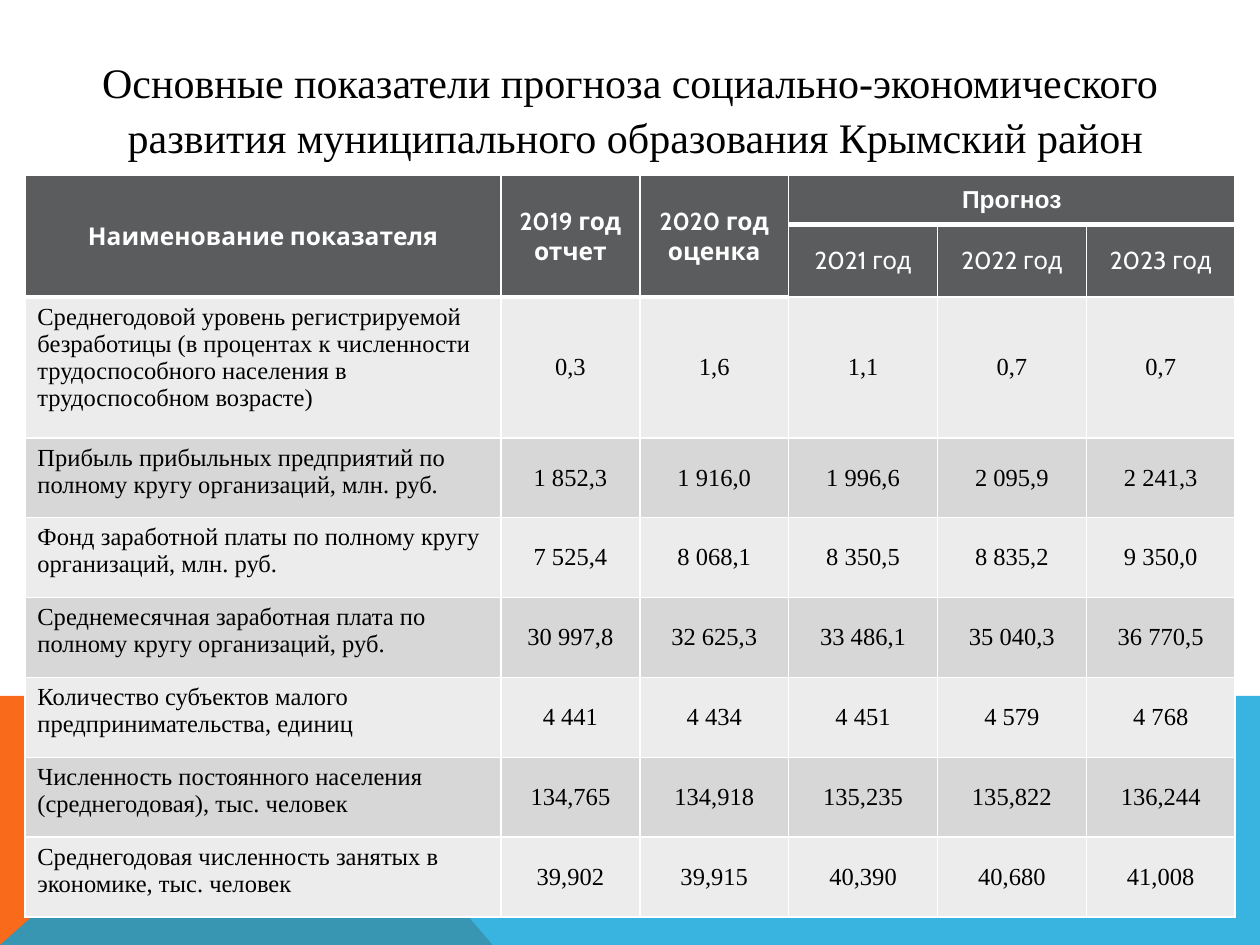
from dataclasses import dataclass

from lxml.etree import SubElement
from pptx import Presentation
from pptx.dml.color import RGBColor
from pptx.enum.text import MSO_ANCHOR, MSO_AUTO_SIZE, PP_ALIGN
from pptx.oxml.ns import qn
from pptx.util import Cm, Pt

# Content
TITLE = [
    "Основные показатели прогноза социально-экономического ",
    "развития муниципального образования Крымский район",
]
HEADINGS = ["Наименование показателя", "2019 год отчет", "2020 год оценка"]
FORECAST = "Прогноз"
FORECAST_YEARS = ["2021 год", "2022 год", "2023 год"]
INDICATORS = [
    ("Среднегодовой уровень регистрируемой безработицы (в процентах к численности "
     "трудоспособного населения в трудоспособном возрасте)",
     "0,3", "1,6", "1,1", "0,7", "0,7"),
    ("Прибыль прибыльных предприятий по полному кругу организаций, млн. руб.",
     "1 852,3", "1 916,0", "1 996,6", "2 095,9", "2 241,3"),
    ("Фонд заработной платы по полному кругу организаций, млн. руб.",
     "7 525,4", "8 068,1", "8 350,5", "8 835,2", "9 350,0"),
    ("Среднемесячная заработная плата по полному кругу организаций, руб.",
     "30 997,8", "32 625,3", "33 486,1", "35 040,3", "36 770,5"),
    ("Количество субъектов малого предпринимательства, единиц",
     "4 441", "4 434", "4 451", "4 579", "4 768"),
    ("Численность постоянного населения (среднегодовая), тыс. человек",
     "134,765", "134,918", "135,235", "135,822", "136,244"),
    ("Среднегодовая численность занятых в экономике, тыс. человек",
     "39,902", "39,915", "40,390", "40,680", "41,008"),
]

# Layout in centimetres
SLIDE_WIDTH, SLIDE_HEIGHT = 25.4, 19.05
COLUMN_WIDTHS = [9.6, 2.8] + [3.0] * 4
ROW_HEIGHTS = [0.99, 1.42, 2.84] + [1.61] * 6
BAND_TOP, BAND_CORNER, BAND_FOOT = 14.03, 5.66, 9.93


@dataclass(frozen=True)
class Theme:
    text: str = "000000"
    header: str = "5B5C5E"
    header_text: str = "FFFFFF"
    border: str = "FFFFFF"
    stripes: tuple = ("ECECEC", "D7D7D8")
    orange: str = "F96A1B"
    blue: str = "08A1D9"
    blue_opacity: int = 80
    serif: str = "Times New Roman"
    header_font: str = "Cabin"
    forecast_font: str = "Arial"
    title_size: int = 24
    table_size: int = 14


THEME = Theme()


def style_font(font, name, size, color, bold=False):
    font.name, font.size, font.bold = name, Pt(size), bold
    font.color.rgb = RGBColor.from_string(color)


def add_band(slide, points, color, opacity=100):
    corners = [(Cm(x), Cm(y)) for x, y in points]
    builder = slide.shapes.build_freeform(*corners[0])
    builder.add_line_segments(corners[1:], close=True)
    shape = builder.convert_to_shape()
    shape.shadow.inherit = False
    shape.fill.solid()
    shape.fill.fore_color.rgb = RGBColor.from_string(color)
    shape.line.fill.background()
    if opacity < 100:
        rgb = shape._element.spPr.find(qn("a:solidFill")).find(qn("a:srgbClr"))
        SubElement(rgb, qn("a:alpha"), val=str(opacity * 1000))


def set_borders(cell, bottom=1):
    properties = cell._tc.get_or_add_tcPr()
    for side, width in (("L", 1), ("R", 1), ("T", 1), ("B", bottom)):
        line = SubElement(properties, qn(f"a:ln{side}"), w=str(Pt(width)))
        fill = SubElement(line, qn("a:solidFill"))
        SubElement(fill, qn("a:srgbClr"), val=THEME.border)


def fill_cell(cell, text, fill, font_name, color, bold=False, centred=True):
    cell.fill.solid()
    cell.fill.fore_color.rgb = RGBColor.from_string(fill)
    cell.vertical_anchor = MSO_ANCHOR.MIDDLE if centred else MSO_ANCHOR.TOP
    cell.text = text
    paragraph = cell.text_frame.paragraphs[0]
    paragraph.alignment = PP_ALIGN.CENTER if centred else PP_ALIGN.LEFT
    style_font(paragraph.font, font_name, THEME.table_size, color, bold)


def fill_header(cell, text, font_name=THEME.header_font, bold=True):
    fill_cell(cell, text, THEME.header, font_name, THEME.header_text, bold)


def add_title(slide):
    title = slide.shapes.title
    title.left, title.top, title.width, title.height = Cm(0.3), Cm(0.91), Cm(25.02), Cm(2.31)
    frame = title.text_frame
    frame.word_wrap = True
    frame.auto_size = MSO_AUTO_SIZE.NONE
    frame.vertical_anchor = MSO_ANCHOR.TOP
    frame.text = "\n".join(TITLE)
    for paragraph in frame.paragraphs:
        paragraph.alignment = PP_ALIGN.CENTER
        paragraph.line_spacing = 1.1
        paragraph.space_before = Pt(0)
        style_font(paragraph.font, THEME.serif, THEME.title_size, THEME.text)


def add_indicator_table(slide):
    table = slide.shapes.add_table(
        len(ROW_HEIGHTS), len(COLUMN_WIDTHS), Cm(0.5), Cm(3.54),
        Cm(sum(COLUMN_WIDTHS)), Cm(sum(ROW_HEIGHTS))).table
    table.first_row = table.horz_banding = False
    for column, width in zip(table.columns, COLUMN_WIDTHS):
        column.width = Cm(width)
    for row, height in zip(table.rows, ROW_HEIGHTS):
        row.height = Cm(height)

    # Borders: a heavier rule below the bold headings
    first_year = len(HEADINGS)
    for r in range(len(ROW_HEIGHTS)):
        for c in range(len(COLUMN_WIDTHS)):
            heavy = r == 0 or (r == 1 and c < first_year)
            set_borders(table.cell(r, c), 3 if heavy else 1)

    # Two-level header
    for c, heading in enumerate(HEADINGS):
        table.cell(0, c).merge(table.cell(1, c))
        fill_header(table.cell(0, c), heading)
    table.cell(0, first_year).merge(table.cell(0, len(COLUMN_WIDTHS) - 1))
    fill_header(table.cell(0, first_year), FORECAST, THEME.forecast_font)
    for c, year in enumerate(FORECAST_YEARS, first_year):
        fill_header(table.cell(1, c), year, bold=False)

    # Striped indicator rows
    for r, indicator in enumerate(INDICATORS):
        for c, text in enumerate(indicator):
            fill_cell(table.cell(r + 2, c), text, THEME.stripes[r % 2],
                      THEME.serif, THEME.text, centred=c > 0)


def main():
    presentation = Presentation()
    presentation.slide_width, presentation.slide_height = Cm(SLIDE_WIDTH), Cm(SLIDE_HEIGHT)
    slide = presentation.slides.add_slide(presentation.slide_layouts[5])

    # Bottom bands
    foot_left, corner = (0, SLIDE_HEIGHT), (BAND_CORNER, BAND_TOP)
    add_band(slide, [foot_left, (0, BAND_TOP), corner, (BAND_FOOT, SLIDE_HEIGHT)], THEME.orange)
    add_band(slide, [foot_left, corner, (SLIDE_WIDTH, BAND_TOP), (SLIDE_WIDTH, SLIDE_HEIGHT)],
             THEME.blue, THEME.blue_opacity)

    add_title(slide)
    add_indicator_table(slide)
    presentation.save("out.pptx")


if __name__ == "__main__":
    main()
